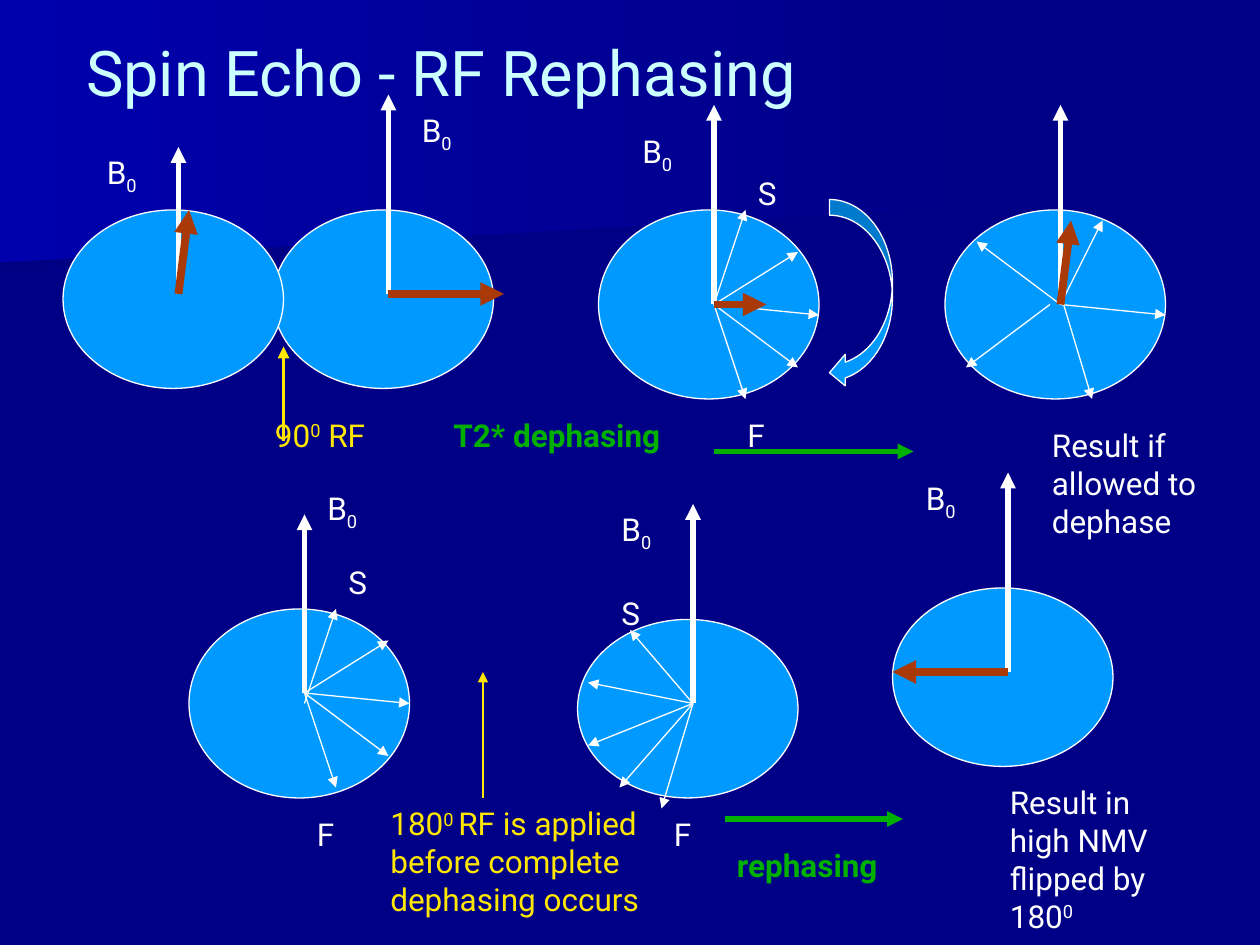
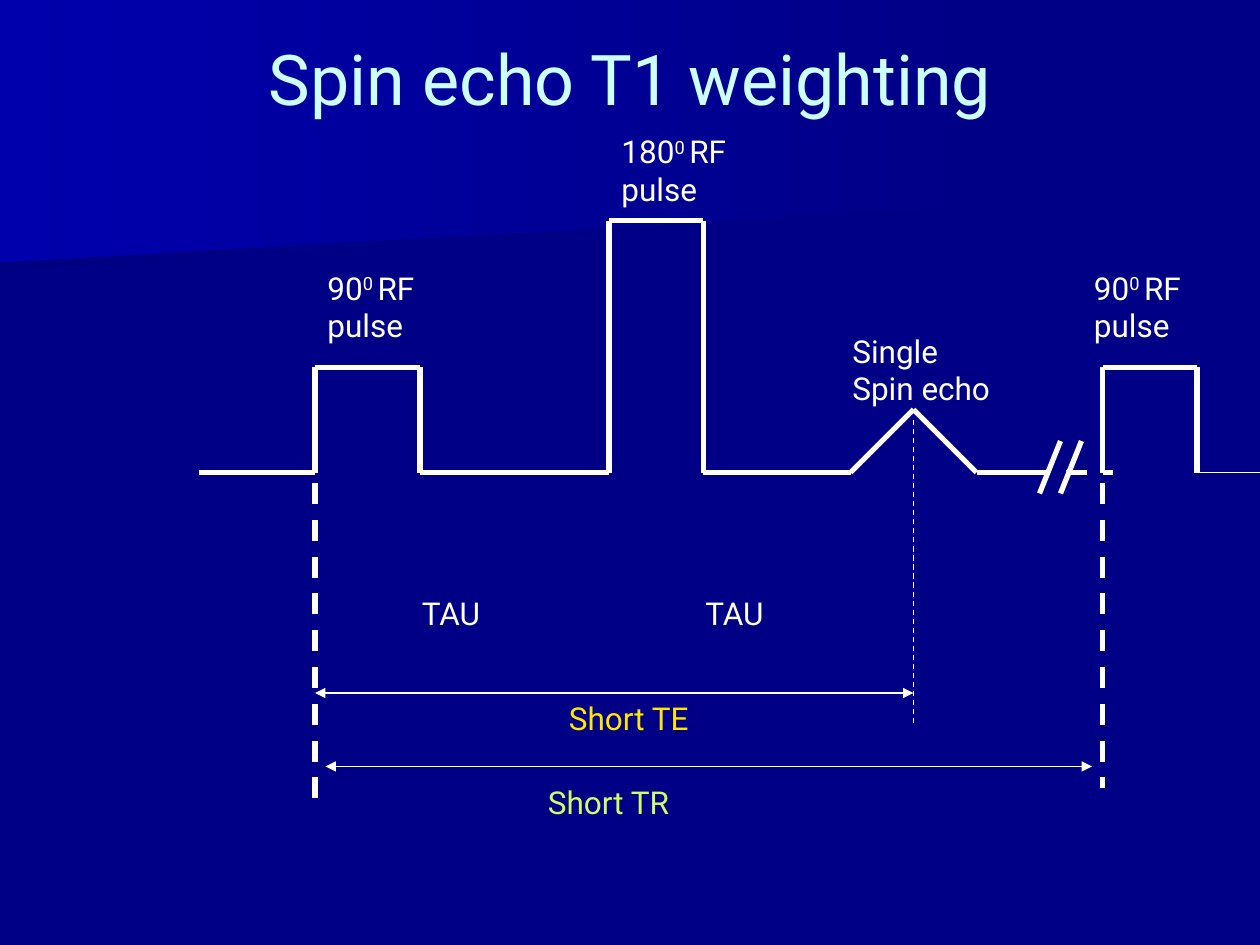
from itertools import pairwise

from pptx import Presentation
from pptx.dml.color import RGBColor
from pptx.enum.dml import MSO_LINE
from pptx.enum.shapes import MSO_CONNECTOR as CONN, MSO_SHAPE as SHAPE
from pptx.enum.text import MSO_ANCHOR as ANCHOR, MSO_AUTO_SIZE as FIT, PP_ALIGN as ALIGN
from pptx.oxml.ns import qn
from pptx.util import Pt

NAVY = RGBColor(0x00, 0x00, 0x86)
DEEP_NAVY = RGBColor(0x00, 0x00, 0x83)
BAND_BLUE = RGBColor(0x00, 0x00, 0xAC)
SKY = RGBColor(0x00, 0x99, 0xFF)
WHITE = RGBColor(0xFF, 0xFF, 0xFF)
RUST = RGBColor(0xA9, 0x39, 0x07)
YELLOW = RGBColor(0xFF, 0xE7, 0x01)
GREEN = RGBColor(0x00, 0xB0, 0x00)
LIME = RGBColor(0xCC, 0xFF, 0x66)
ICE = RGBColor(0xCC, 0xFF, 0xFF)

FONT = "Roboto"
THIN, MEDIUM, THICK, HEAVY = 0.75, 2.25, 3, 4.5
SUB, SUPER = -25, 30

# Text with raised or lowered parts: (text, baseline shift in percent)
B0 = ["B", ("0", SUB)]
PULSE_90 = ["90", ("0 ", SUPER), "RF pulse"]
PULSE_180 = ["180", ("0 ", SUPER), "RF pulse"]

# Master bands, back to front: outline, colour at left
BANDS = [
    ([(560, 110), (0, 156), (0, 73), (561, 73)], DEEP_NAVY),
    ([(570, 117), (0, 150), (0, 0), (570, 0)], BAND_BLUE),
]


def set_all(target, values):
    for name, value in values.items():
        setattr(target, name, value)


class Deck:
    def __init__(self):
        self.prs = Presentation()
        set_all(self.prs, {"slide_width": Pt(720), "slide_height": Pt(540)})
        background = self.prs.slide_master.background.fill
        background.solid()
        background.fore_color.rgb = NAVY
        self.slide = None

    def new_slide(self, title, box, size, align):
        first = self.slide is None
        self.slide = self.prs.slides.add_slide(self.prs.slide_layouts[5])
        if first:
            self.master_bands()
        heading = self.slide.shapes.title
        left, top, width, height = map(Pt, box)
        set_all(heading, {"left": left, "top": top, "width": width, "height": height})
        frame = heading.text_frame
        set_all(frame, {"auto_size": FIT.NONE, "vertical_anchor": ANCHOR.MIDDLE,
                        "word_wrap": True})
        frame.paragraphs[0].alignment = align
        self.add_runs(frame, [title], ICE, size)

    def master_bands(self):
        """Draw the bands once and move them to the back of the master."""
        tree = self.prs.slide_master.shapes.element
        for index, (outline, left_colour) in enumerate(BANDS):
            start, *rest = [(Pt(x), Pt(y)) for x, y in outline]
            builder = self.slide.shapes.build_freeform(*start)
            builder.add_line_segments(rest)
            band = builder.convert_to_shape()
            band.shadow.inherit = False
            band.line.fill.background()
            band.fill.gradient()
            band.fill.gradient_angle = 0
            for stop, colour in zip(band.fill.gradient_stops, (left_colour, NAVY)):
                stop.color.rgb = colour
            band.element.nvSpPr.cNvPr.id = 20 + index
            tree.insert(2 + index, band.element)

    def add_runs(self, frame, pieces, colour, size=18, bold=False):
        paragraph = frame.paragraphs[0]
        for piece in pieces:
            text, shift = (piece, 0) if isinstance(piece, str) else piece
            run = paragraph.add_run()
            run.text = text
            set_all(run.font, {"name": FONT, "size": Pt(size), "bold": bold})
            run.font.color.rgb = colour
            if shift:
                run._r.get_or_add_rPr().set("baseline", str(shift * 1000))

    def label(self, pieces, left, top, width, lines=1, colour=WHITE, bold=False):
        box = self.slide.shapes.add_textbox(
            Pt(left), Pt(top), Pt(width), Pt(7.2 + 21.6 * lines))
        set_all(box.text_frame, {"word_wrap": True, "auto_size": FIT.SHAPE_TO_FIT_TEXT})
        self.add_runs(box.text_frame, pieces, colour, bold=bold)

    def shape(self, kind, *box):
        shape = self.slide.shapes.add_shape(kind, *map(Pt, box))
        shape.shadow.inherit = False
        shape.fill.solid()
        shape.fill.fore_color.rgb = SKY
        shape.line.color.rgb = WHITE
        shape.line.width = Pt(THIN)
        return shape

    def line(self, start, end, width=THICK, colour=WHITE, dash=False, ends=()):
        line = self.slide.shapes.add_connector(CONN.STRAIGHT, *map(Pt, (*start, *end)))
        line.line.color.rgb = colour
        line.line.width = Pt(width)
        if dash:
            line.line.dash_style = MSO_LINE.DASH
        properties = line.element.spPr
        outline = properties.find(qn("a:ln"))
        for end_name in ends:
            outline.append(outline.makeelement(qn(f"a:{end_name}"), {"type": "triangle"}))
        properties.append(properties.makeelement(qn("a:effectLst"), {}))

    def arrow(self, start, end, width=THIN, colour=WHITE):
        self.line(start, end, width, colour, ends=["tailEnd"])

    def span(self, start, end):
        self.line(start, end, THIN, ends=["headEnd", "tailEnd"])

    def trace(self, points):
        for start, end in pairwise(points):
            self.line(start, end)

    def spin_system(self, left, top, height, centre_y, field_top, spins=(), nmv=None):
        """Ellipse with B0 arrow, spins (dx, dy[, start dx, start dy]) and NMV."""
        self.shape(SHAPE.OVAL, left, top, 126, height)
        x, y = left + 66, centre_y
        for dx, dy, *shift in spins:
            start_dx, start_dy = shift or (0, 0)
            self.arrow((x + start_dx, y + start_dy), (x + dx, y + dy))
        self.arrow((x, y), (x, field_top), THICK)
        if nmv:
            self.arrow((x, y), (x + nmv[0], y + nmv[1]), HEAVY, RUST)


def rephasing_slide(deck):
    deck.new_slide("Spin Echo - RF Rephasing", (42, 18, 528, 45), 36, ALIGN.LEFT)

    # Spin systems
    fan = [(60, 6), (18, 54), (48, -30), (48, 36)]
    dephased = [(24, -48), (60, 6), (18, 54, 0, -6), (-48, -36), (-54, 36, -6, 0)]
    flipped = [(-60, -12), (-42, 48), (-18, 60), (-36, -42), (-60, 24)]
    deck.spin_system(156, 120, 102, 168, 54, nmv=(66, 0))
    deck.spin_system(540, 120, 108, 174, 60, dephased, (6, -48))
    deck.spin_system(330, 354, 102, 402, 288, flipped)
    deck.spin_system(510, 336, 102, 384, 270, nmv=(-66, 0))
    deck.spin_system(342, 120, 108, 174, 60, [*fan, (18, -54)], (30, 0))
    deck.spin_system(36, 120, 102, 168, 84, nmv=(6, -48))
    deck.spin_system(108, 348, 108, 396, 294, [*fan, (18, -48, 0, 6)])
    turn = deck.shape(SHAPE.CURVED_LEFT_ARROW, 474, 114, 36, 108)
    for index, value in enumerate((0.25, 0.5, 0.25)):
        turn.adjustments[index] = value

    # RF pulses and phase steps
    deck.arrow((162, 252), (162, 198), MEDIUM, YELLOW)
    deck.arrow((276, 456), (276, 384), THIN, YELLOW)
    deck.arrow((408, 258), (522, 258), THICK, GREEN)
    deck.arrow((414, 468), (516, 468), THICK, GREEN)

    # Field, slow and fast spin labels
    for left, top in [(54, 84), (234, 60), (360, 72), (180, 276), (348, 288), (522, 270)]:
        deck.label(B0, left, top, 36)
    spin_labels = {"S": [(426, 96), (192, 318), (348, 336)],
                   "F": [(420, 234), (174, 462), (378, 462)]}
    for letter, places in spin_labels.items():
        for left, top in places:
            deck.label([letter], left, top, 24)

    # Explanations
    deck.label(["90", ("0", SUPER), " RF"], 150, 234, 72, colour=YELLOW)
    deck.label(["180", ("0 ", SUPER), "RF is applied before complete dephasing occurs"],
               216, 456, 180, 3, YELLOW)
    deck.label(["T2* dephasing"], 252, 234, 162, colour=GREEN, bold=True)
    deck.label(["rephasing"], 414, 480, 132, colour=GREEN, bold=True)
    deck.label(["Result if allowed to dephase"], 594, 240, 114, 3)
    deck.label(["Result in high NMV flipped by 180", ("0", SUPER)], 570, 444, 114, 4)


def weighting_slide(deck):
    deck.new_slide("Spin echo T1 weighting", (36, 21.6, 648, 45), 40, ALIGN.CENTER)
    base, top_90, top_180, top_echo = 270, 210, 126, 234
    first_90, echo, next_90 = 180, 522, 630

    # Pulse sequence
    deck.trace([(114, base), (first_90, base), (first_90, top_90), (240, top_90),
                (240, base), (348, base), (348, top_180), (402, top_180), (402, base),
                (486, base), (echo, top_echo), (558, base), (588, base)])
    deck.line((588, base), (636, base), dash=True)
    deck.trace([(next_90, base), (next_90, top_90), (684, top_90), (684, base)])
    deck.line((684, base), (720, base), THIN)
    for break_x in (606, 618):
        deck.line((break_x, 252), (break_x - 12, 282))

    # Time marks
    deck.line((first_90, 276), (first_90, 456), dash=True)
    deck.line((echo, 240), (echo, 414), THIN, dash=True)
    deck.line((next_90, 276), (next_90, 450), dash=True)
    deck.span((first_90, 396), (echo, 396))
    deck.span((first_90 + 6, 438), (next_90 - 6, 438))

    # Labels
    deck.label(PULSE_90, 180, 150, 72, 2)
    deck.label(PULSE_180, 348, 72, 84, 2)
    deck.label(["Single Spin echo"], 480, 186, 102, 2)
    deck.label(PULSE_90, 618, 150, 72, 2)
    for tau_left in (234, 396):
        deck.label(["TAU"], tau_left, 336, 60)
    deck.label(["Short TE"], 318, 396, 96, colour=YELLOW)
    deck.label(["Short TR"], 306, 444, 90, colour=LIME)


def main():
    deck = Deck()
    rephasing_slide(deck)
    weighting_slide(deck)
    deck.prs.save("out.pptx")


if __name__ == "__main__":
    main()
